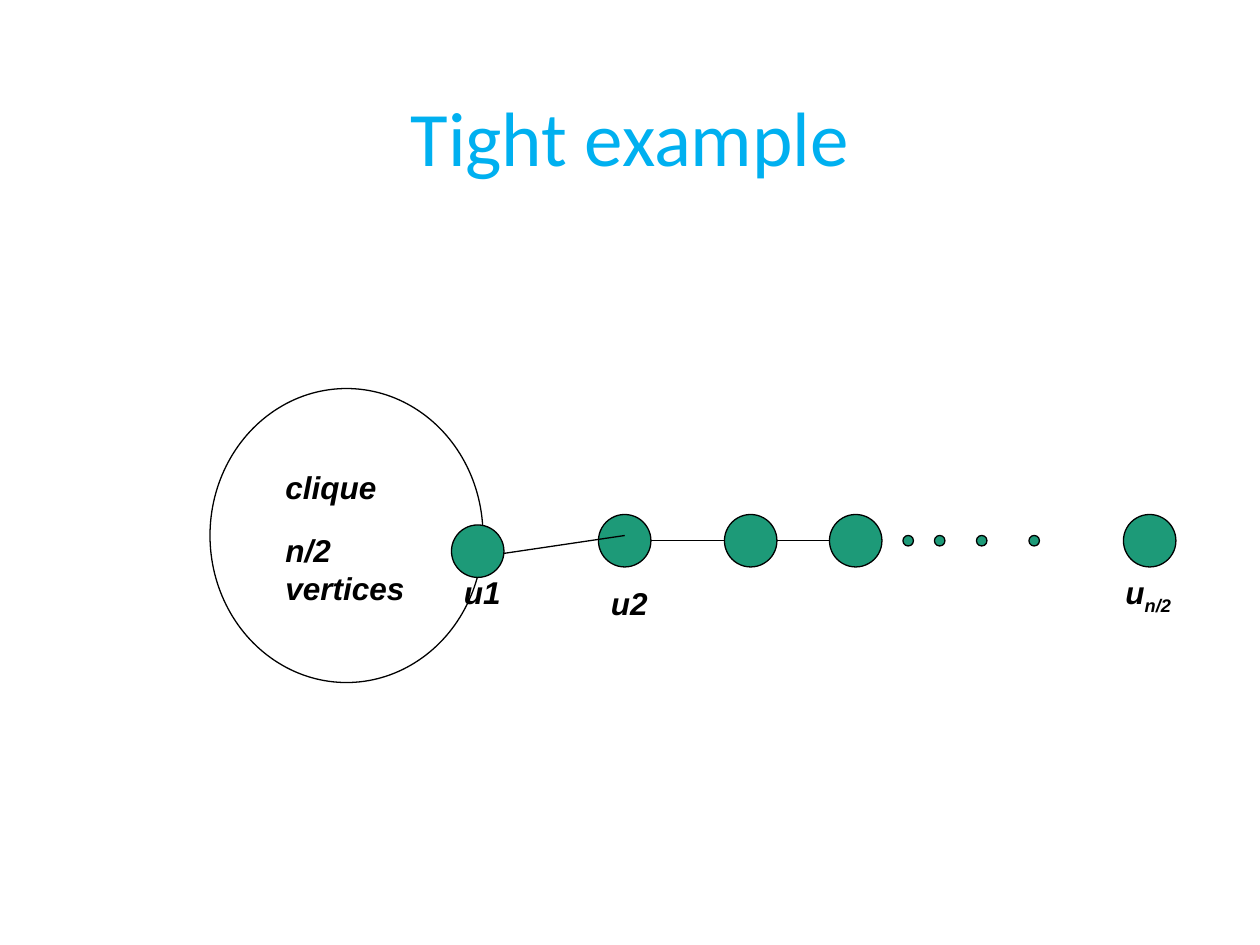
from lxml.etree import SubElement
from pptx import Presentation
from pptx.dml.color import RGBColor
from pptx.enum.shapes import MSO_CONNECTOR as Link, MSO_SHAPE as Shape
from pptx.enum.text import MSO_ANCHOR as Anchor, PP_ALIGN as Align
from pptx.oxml.ns import qn
from pptx.util import Pt

PX = 7620  # EMU per px, 120 px to the inch


def emu(*px):
    return [n * PX for n in px]


def rgb(code):
    return RGBColor.from_string(code)


class Board:
    ink, green, blue = "000000", "1D9A78", "00B0F0"
    stroke = Pt(0.75)

    def __init__(self, slide):
        self.slide = slide

    def pen(self, line):
        line.color.rgb = rgb(self.ink)
        line.width = self.stroke

    def oval(self, x, y, w, h, fill=None):
        oval = self.slide.shapes.add_shape(Shape.OVAL, *emu(x, y, w, h))
        oval.shadow.inherit = False
        if fill:
            oval.fill.solid()
            oval.fill.fore_color.rgb = rgb(fill)
        else:
            oval.fill.background()
        self.pen(oval.line)

    def node(self, x, y, size=50):
        self.oval(x, y, size, size, self.green)

    def edge(self, x1, y1, x2, y2):
        edge = self.slide.shapes.add_connector(Link.STRAIGHT, *emu(x1, y1, x2, y2))
        self.pen(edge.line)
        SubElement(edge._element.spPr, qn("a:effectLst"))

    def text(self, x, y, w, h, words, size, face, color):
        box = self.slide.shapes.add_textbox(*emu(x, y, w, h))
        box.text_frame.word_wrap = True
        para = box.text_frame.paragraphs[0]
        para.add_run().text = words
        para.font.size = Pt(size)
        para.font.name = face
        para.font.color.rgb = rgb(color)
        return box.text_frame, para

    def title(self, x, y, w, h, words):
        frame, para = self.text(x, y, w, h, words, 44, "Calibri", self.blue)
        frame.vertical_anchor = Anchor.MIDDLE
        para.alignment = Align.CENTER
        para.line_spacing = 0.9

    def label(self, x, y, w, words, sub=None, h=48):
        para = self.text(x, y, w, h, words, 18, "Arial", self.ink)[1]
        para.font.bold = para.font.italic = True
        if sub:
            run = para.add_run()
            run.text = sub
            run.font._element.set("baseline", "-25000")


def main():
    deck = Presentation()
    deck.slide_width, deck.slide_height = emu(1200, 900)
    board = Board(deck.slides.add_slide(deck.slide_layouts[6]))

    board.title(83, 48, 1034, 174, "Tight example")

    # Clique
    board.oval(200, 370, 260, 280)

    # Path of nodes, with dots for those left out
    board.node(570, 490)
    board.edge(460, 530, 595, 510)
    for x in (690, 790, 1070):
        board.node(x, 490)
    for x in (860, 890, 930, 980):
        board.node(x, 510, 10)
    for x1, x2 in ((620, 690), (740, 790)):
        board.edge(x1, 515, x2, 515)

    # Labels, and the node where the path meets the clique
    board.label(260, 500, 140, "n/2 vertices", h=84)
    board.label(260, 440, 140, "clique")
    board.node(430, 500)
    board.label(430, 540, 90, "u1")
    board.label(570, 550, 110, "u2")
    board.label(1060, 540, 140, "u", sub="n/2")

    deck.save("out.pptx")


if __name__ == "__main__":
    main()
